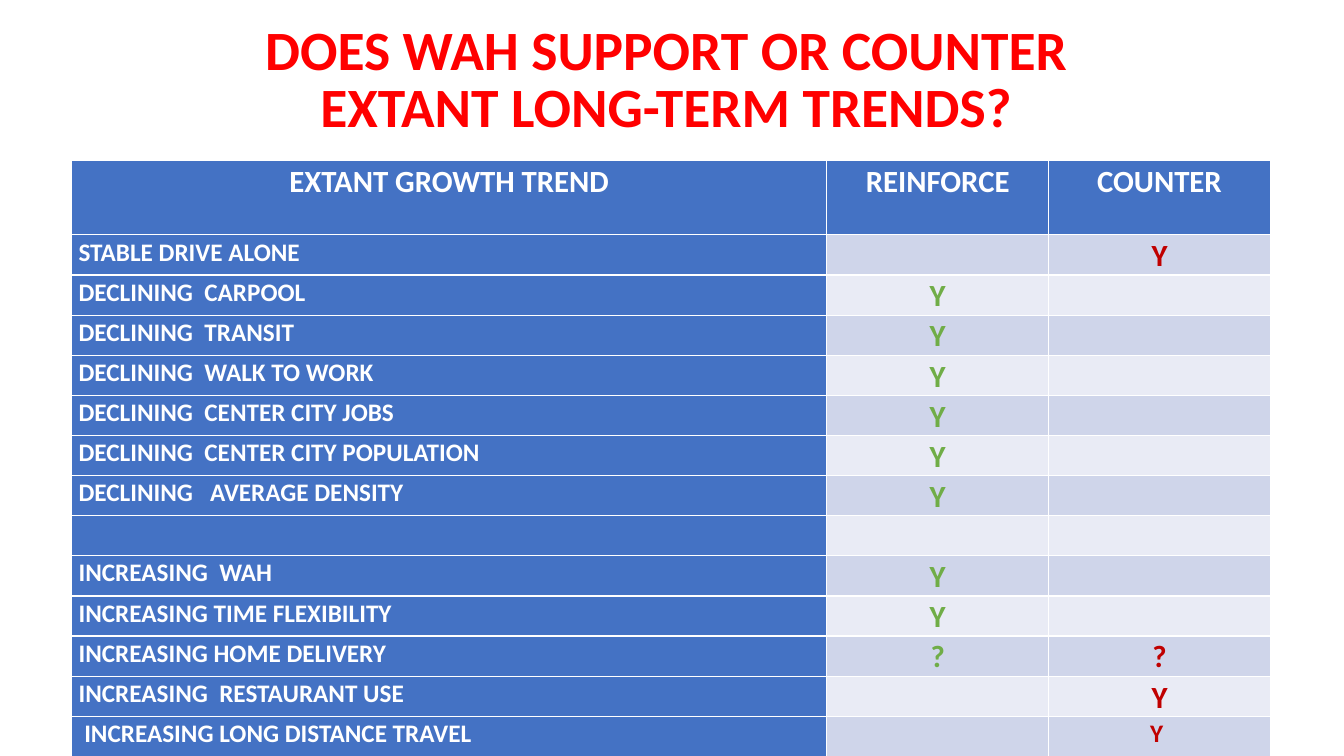
from dataclasses import dataclass

from pptx import Presentation
from pptx.dml.color import RGBColor
from pptx.enum.text import MSO_ANCHOR as Anchor, MSO_AUTO_SIZE as AutoSize, PP_ALIGN as Align
from pptx.util import Inches, Pt


@dataclass(frozen=True)
class Theme:
    """Colours, type sizes and font of the slide."""
    font: str = "Calibri"
    title: str = "FF0000"
    header: str = "4472C4"
    light: str = "FFFFFF"
    bands: tuple = ("CFD5EA", "E9EBF5")
    reinforce: str = "70AD47"
    counter: str = "C00000"
    title_size: float = 39.6
    large_size: float = 22
    label_size: float = 18


@dataclass(frozen=True)
class Box:
    """A region in inches."""
    left: float
    top: float
    width: float
    height: float

    def emu(self):
        """Return the region as four lengths."""
        return [Inches(n) for n in (self.left, self.top, self.width, self.height)]


THEME = Theme()
TITLE_LINES = ("DOES WAH SUPPORT OR COUNTER ", "EXTANT LONG-TERM TRENDS? ")
HEADINGS = ("EXTANT GROWTH TREND", "REINFORCE", "COUNTER")
TRENDS = (
    ("STABLE DRIVE ALONE", "", "Y"),
    ("DECLINING  CARPOOL", "Y", ""),
    ("DECLINING  TRANSIT", "Y", ""),
    ("DECLINING  WALK TO WORK", "Y", ""),
    ("DECLINING  CENTER CITY JOBS", "Y", ""),
    ("DECLINING  CENTER CITY POPULATION", "Y", ""),
    ("DECLINING   AVERAGE DENSITY", "Y", ""),
    ("", "", ""),
    ("INCREASING  WAH", "Y", ""),
    ("INCREASING TIME FLEXIBILITY", "Y", ""),
    ("INCREASING HOME DELIVERY", "?", "?"),
    ("INCREASING  RESTAURANT USE", "", "Y"),
    (" INCREASING LONG DISTANCE TRAVEL", "", "Y "),
)
COLUMN_SHARES = (0.63, 0.185, 0.185)
HEADER_HEIGHT = 0.74


def write(para, *lines, size, color, align=Align.CENTER, spacing=1.07):
    """Write bold lines into a paragraph."""
    para.alignment = align
    para.line_spacing = spacing
    for index, line in enumerate(lines):
        if index:
            para.add_line_break()
        span = para.add_run()
        span.text = line
        span.font.name = THEME.font
        span.font.size = Pt(size)
        span.font.bold = True
        span.font.color.rgb = RGBColor.from_string(color)


def place_title(page, box):
    """Place the two-line title in its box."""
    title = page.shapes.title
    title.left, title.top, title.width, title.height = box.emu()
    frame = title.text_frame
    frame.word_wrap = True
    frame.auto_size = AutoSize.NONE
    frame.vertical_anchor = Anchor.MIDDLE
    frame.margin_bottom = Inches(0.68)
    write(frame.paragraphs[0], *TITLE_LINES,
          size=THEME.title_size, color=THEME.title, spacing=0.87)


def fill_cell(cell, text, fill, **style):
    """Colour a cell and write its text, if any."""
    cell.fill.solid()
    cell.fill.fore_color.rgb = RGBColor.from_string(fill)
    cell.margin_left = cell.margin_right = Inches(0.07)
    cell.margin_top = cell.margin_bottom = 0
    if text:
        write(cell.text_frame.paragraphs[0], text, **style)


def place_table(page, box):
    """Place the trend table, one row for each trend, in its box."""
    table = page.shapes.add_table(len(TRENDS) + 1, len(HEADINGS), *box.emu()).table
    table.first_col = True
    for column, share in zip(table.columns, COLUMN_SHARES):
        column.width = Inches(box.width * share)
    row_height = (box.height - HEADER_HEIGHT) / len(TRENDS)
    for index, row in enumerate(table.rows):
        row.height = Inches(row_height if index else HEADER_HEIGHT)
    for index, heading in enumerate(HEADINGS):
        fill_cell(table.cell(0, index), heading, THEME.header,
                  size=THEME.large_size, color=THEME.light)
    for index, (trend, reinforce, counter) in enumerate(TRENDS, 1):
        band = THEME.bands[(index - 1) % 2]
        mark_size = THEME.label_size if index == len(TRENDS) else THEME.large_size
        fill_cell(table.cell(index, 0), trend, THEME.header,
                  size=THEME.label_size, color=THEME.light, align=Align.LEFT)
        fill_cell(table.cell(index, 1), reinforce, band,
                  size=mark_size, color=THEME.reinforce)
        fill_cell(table.cell(index, 2), counter, band,
                  size=mark_size, color=THEME.counter)


def main():
    """Build the deck and save it."""
    deck = Presentation()
    deck.slide_width, deck.slide_height = Inches(13.33), Inches(7.5)
    page = deck.slides.add_slide(deck.slide_layouts[5])
    place_title(page, Box(0.92, 0.4, 11.5, 1.45))
    place_table(page, Box(0.71, 1.59, 11.89, 5.91))
    deck.save("out.pptx")


if __name__ == "__main__":
    main()
